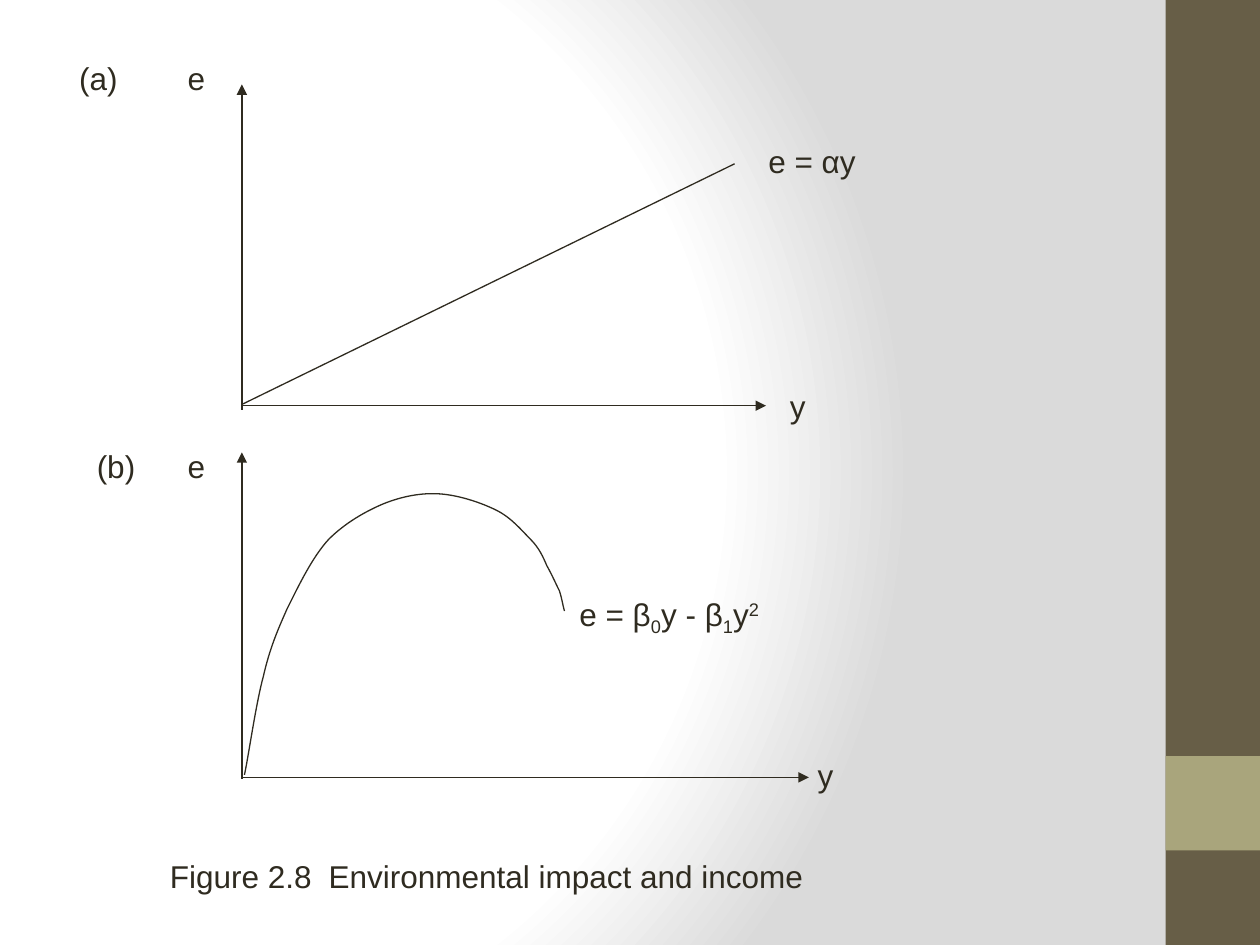
"""Build the slide with two diagrams of environmental impact against income."""
from lxml import etree
from pptx import Presentation, util as u
from pptx.dml.color import RGBColor
from pptx.enum import shapes, text
from pptx.oxml import parse_xml
from pptx.oxml.ns import nsdecls, qn

COLORS = {"ink": "2F2B20", "band": "675E47", "accent": "A9A57C",
          "light": "FFFFFF", "shade": "DADADA"}
FONT, SIZE, LINE = "Arial", 18, 0.75
STOPS = [(0, "light"), (75, "light"), (100, "shade")]

BANDS = [("band", 9.25, 0, 0.75, 7.5), ("accent", 9.25, 6, 0.75, 0.75)]
AXIS_X = 1.92
LINES = [
    ((AXIS_X, 3.25), (AXIS_X, 0.67), True),
    ((AXIS_X, 6.18), (AXIS_X, 3.59), True),
    ((AXIS_X, 3.22), (6.08, 3.22), True),
    ((AXIS_X, 6.17), (6.42, 6.17), True),
    ((AXIS_X, 3.21), (5.83, 1.3), False),
]
LABELS = [
    (1.25, 6.75, 6.58, 1.26, [("Figure 2.8\tEnvironmental impact and income", 0)]),
    (0.53, 0.42, 2.55, 0.86, [("(a)\te", 0)]),
    (0.67, 3.5, 1.5, 0.72, [("(b)\te", 0)]),
    (6, 1.08, 1.58, None, [("e = αy", 0)]),
    (6.17, 3.02, 1.08, None, [("y", 0)]),
    (6.39, 5.95, 0.75, None, [("y", 0)]),
    (4.5, 4.67, 3.25, None, [("e = β", 0), ("0", -25), ("y - β", 0),
                             ("1", -25), ("y", 0), ("2", 30)]),
]
CURVE_START = (1.94, 6.15)
CURVE = [
    ((1.97, 6.02), (2.03, 5.59), (2.09, 5.37)),
    ((2.14, 5.15), (2.2, 5.01), (2.28, 4.83)),
    ((2.37, 4.65), (2.48, 4.42), (2.61, 4.28)),
    ((2.74, 4.15), (2.9, 4.06), (3.04, 4)),
    ((3.19, 3.94), (3.34, 3.91), (3.49, 3.92)),
    ((3.64, 3.93), (3.82, 3.99), (3.94, 4.05)),
    ((4.06, 4.11), (4.14, 4.21), (4.21, 4.28)),
    ((4.28, 4.35), (4.31, 4.42), (4.34, 4.49)),
    ((4.38, 4.56), (4.41, 4.63), (4.44, 4.69)),
    ((4.46, 4.75), (4.47, 4.82), (4.48, 4.85)),
]


def rgb(name):
    return RGBColor.from_string(COLORS[name])


def set_background(slide):
    stops = "".join(f'<a:gs pos="{pos * 1000}"><a:srgbClr val="{COLORS[name]}"/></a:gs>'
                    for pos, name in STOPS)
    gradient = parse_xml(
        f'<a:gradFill {nsdecls("a")} rotWithShape="1"><a:gsLst>{stops}</a:gsLst>'
        '<a:path path="circle"><a:fillToRect l="20000" t="50000" r="100000" b="50000"/>'
        '</a:path></a:gradFill>')
    slide.background.fill.solid()
    solid = slide.background._cSld.find(".//" + qn("a:solidFill"))
    solid.getparent().replace(solid, gradient)


def add_band(slide, color, *box):
    sp = slide.shapes.add_shape(shapes.MSO_SHAPE.RECTANGLE, *map(u.Inches, box))
    sp.shadow.inherit = False
    sp.fill.solid()
    sp.fill.fore_color.rgb = rgb(color)
    sp.line.fill.background()


def style_line(line):
    line.color.rgb = rgb("ink")
    line.width = u.Pt(LINE)


def add_line(slide, start, end, arrow):
    cn = slide.shapes.add_connector(shapes.MSO_CONNECTOR.STRAIGHT,
                                    *map(u.Inches, start + end))
    style_line(cn.line)
    if arrow:
        etree.SubElement(cn.line._get_or_add_ln(), qn("a:tailEnd"), type="triangle")
    etree.SubElement(cn._element.spPr, qn("a:effectLst"))


def add_curve(slide):
    anchors = [segment[-1] for segment in CURVE]
    left, top = (min(values) for values in zip(CURVE_START, *anchors))
    scale = u.Inches(0.01)
    builder = slide.shapes.build_freeform(*(v * 100 for v in CURVE_START), scale=scale)
    builder.add_line_segments([(x * 100, y * 100) for x, y in anchors], close=False)
    sp = builder.convert_to_shape()
    sp.shadow.inherit = False
    sp.fill.background()
    style_line(sp.line)
    for old, segment in zip(sp._element.findall(".//" + qn("a:lnTo")), CURVE):
        bezier = etree.Element(qn("a:cubicBezTo"))
        for x, y in segment:
            etree.SubElement(bezier, qn("a:pt"), x=str(round((x - left) * 100)),
                             y=str(round((y - top) * 100)))
        old.getparent().replace(old, bezier)


def add_label(slide, left, top, width, tab, runs):
    box = slide.shapes.add_textbox(*map(u.Inches, (left, top, width, 0.5)))
    tf = box.text_frame
    tf.word_wrap = True
    tf.vertical_anchor = text.MSO_ANCHOR.TOP
    p = tf.paragraphs[0]
    if tab:
        tabs = etree.SubElement(p._p.get_or_add_pPr(), qn("a:tabLst"))
        etree.SubElement(tabs, qn("a:tab"), pos=str(u.Inches(tab)), algn="l")
    for words, baseline in runs:
        r = p.add_run()
        r.text = words
        r.font.name, r.font.size = FONT, u.Pt(SIZE)
        r.font.color.rgb = rgb("ink")
        if baseline:
            r.font._element.set("baseline", str(baseline * 1000))


def main():
    prs = Presentation()
    prs.slide_width, prs.slide_height = u.Inches(10), u.Inches(7.5)
    slide = prs.slides.add_slide(prs.slide_layouts.get_by_name("Blank"))
    set_background(slide)
    for band in BANDS:
        add_band(slide, *band)
    for line in LINES:
        add_line(slide, *line)
    add_curve(slide)
    for label in LABELS:
        add_label(slide, *label)
    prs.save("out.pptx")


if __name__ == "__main__":
    main()
